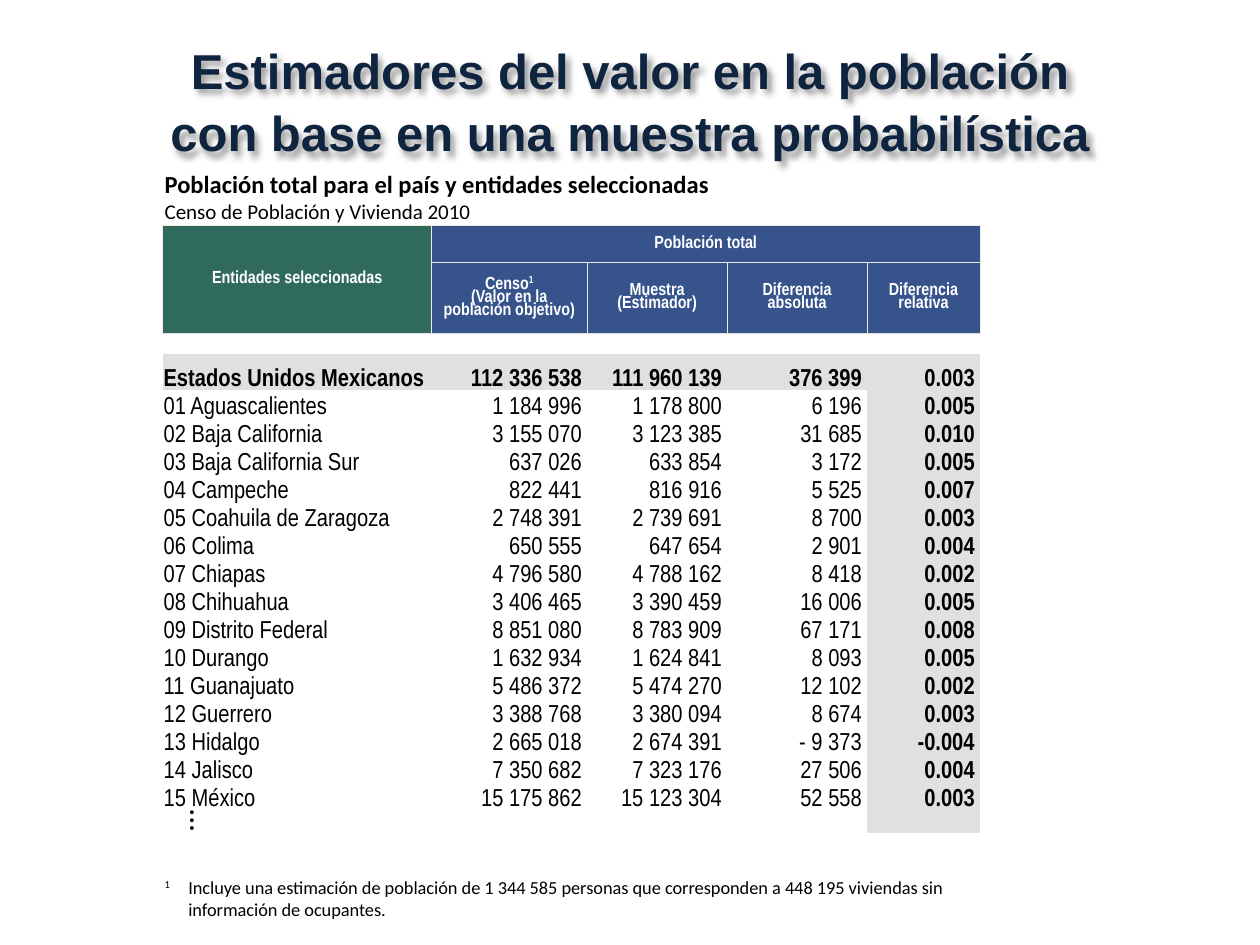
from lxml import etree
from pptx import Presentation
from pptx.dml.color import RGBColor
from pptx.enum.text import MSO_ANCHOR, MSO_AUTO_SIZE, PP_ALIGN
from pptx.oxml import parse_xml
from pptx.oxml.ns import nsdecls, qn
from pptx.util import Pt

LEFT, CENTER, RIGHT = PP_ALIGN.LEFT, PP_ALIGN.CENTER, PP_ALIGN.RIGHT
TOP, MIDDLE, BOTTOM = MSO_ANCHOR.TOP, MSO_ANCHOR.MIDDLE, MSO_ANCHOR.BOTTOM
NO_AUTOFIT = MSO_AUTO_SIZE.NONE

NAVY, GREEN, BLUE, GRAY = "0F243E", "306A5C", "36538C", "E0E0E0"
CREAM, WHITE, BLACK = "EEECE1", "FFFFFF", "000000"
NARROW = "Arial Narrow"
PLAIN_STYLE = "{2D5ABB26-0587-4C30-8999-92F81FD0307C}"

TITLE = "Estimadores del valor en la población\vcon base en una muestra probabilística"
HEADING = "Población total para el país y entidades seleccionadas"
SUBHEADING = "Censo de Población y Vivienda 2010"
FOOTNOTE = ("\tIncluye una estimación de población de 1 344 585 personas que "
            "corresponden a 448 195 viviendas sin información de ocupantes.")
ENTITY_HEADER, GROUP_HEADER = "Entidades seleccionadas", "Población total"
COLUMN_HEADERS = [
    "Censo\n(Valor en la población objetivo)",
    "Muestra\n(Estimador)",
    "Diferencia\vabsoluta",
    "Diferencia relativa",
]
ENTITIES = [
    ("Estados Unidos Mexicanos", "112 336 538", "111 960 139", "376 399", "0.003"),
    ("01 Aguascalientes", "1 184 996", "1 178 800", "6 196", "0.005"),
    ("02 Baja California", "3 155 070", "3 123 385", "31 685", "0.010"),
    ("03 Baja California Sur", "637 026", "633 854", "3 172", "0.005"),
    ("04 Campeche", "822 441", "816 916", "5 525", "0.007"),
    ("05 Coahuila de Zaragoza", "2 748 391", "2 739 691", "8 700", "0.003"),
    ("06 Colima", "650 555", "647 654", "2 901", "0.004"),
    ("07 Chiapas", "4 796 580", "4 788 162", "8 418", "0.002"),
    ("08 Chihuahua", "3 406 465", "3 390 459", "16 006", "0.005"),
    ("09 Distrito Federal", "8 851 080", "8 783 909", "67 171", "0.008"),
    ("10 Durango", "1 632 934", "1 624 841", "8 093", "0.005"),
    ("11 Guanajuato", "5 486 372", "5 474 270", "12 102", "0.002"),
    ("12 Guerrero", "3 388 768", "3 380 094", "8 674", "0.003"),
    ("13 Hidalgo", "2 665 018", "2 674 391", "- 9 373", "-0.004"),
    ("14 Jalisco", "7 350 682", "7 323 176", "27 506", "0.004"),
    ("15 México", "15 175 862", "15 123 304", "52 558", "0.003"),
]
COLUMN_WIDTHS = [153.5, 89, 80, 80, 64.5]
ROW_HEIGHTS = [20.75, 40.75, 12, 20.5] + [16] * (len(ENTITIES) - 1) + [13]
FIRST_ENTITY_ROW = 3
LAST_ROW = len(ROW_HEIGHTS) - 1
LAST_COLUMN = len(COLUMN_WIDTHS) - 1


def color(value):
    return RGBColor.from_string(value)


def format_runs(paragraph, size, font_name, value, bold=False):
    for run in paragraph.runs:
        run.font.size = Pt(size)
        run.font.name = font_name
        run.font.bold = bold
        run.font.color.rgb = color(value)


def add_superscript(paragraph):
    run = paragraph.add_run()
    run.text = "1"
    run.font._element.set("baseline", "30000")


def add_text_box(slide, left, top, width, height):
    frame = slide.shapes.add_textbox(Pt(left), Pt(top), Pt(width), Pt(height)).text_frame
    frame.word_wrap = True
    return frame


def set_borders(cell, bottom):
    properties = cell._tc.get_or_add_tcPr()
    sides = [("lnL", CREAM), ("lnR", CREAM), ("lnT", CREAM), ("lnB", bottom)]
    for index, (side, value) in enumerate(sides):
        properties.insert(index, parse_xml(
            f'<a:{side} {nsdecls("a")} w="{Pt(0.5)}"><a:solidFill>'
            f'<a:srgbClr val="{value}"/></a:solidFill></a:{side}>'))


def write_cell(cell, text, alignment, anchor, size, value, bold, side_margin):
    cell.text_frame.text = text
    cell.vertical_anchor = anchor
    cell.margin_left = cell.margin_right = Pt(side_margin)
    cell.margin_top, cell.margin_bottom = Pt(0.5), Pt(0)
    for paragraph in cell.text_frame.paragraphs:
        paragraph.alignment = alignment
        paragraph.line_spacing = 0.8
        format_runs(paragraph, size, NARROW, value, bold)


def fill_cell(cell, value):
    cell.fill.solid()
    cell.fill.fore_color.rgb = color(value)


def shrink_empty_cell(cell):
    cell.margin_top = cell.margin_bottom = Pt(0)
    mark = etree.SubElement(cell.text_frame.paragraphs[0]._p, qn("a:endParaRPr"))
    mark.set("sz", "600")


def add_title(slide):
    title = slide.shapes.title
    title.left, title.top, title.width, title.height = Pt(0), Pt(15), Pt(720), Pt(83)
    frame = title.text_frame
    frame.text = TITLE
    frame.auto_size = NO_AUTOFIT
    frame.vertical_anchor = MIDDLE
    paragraph = frame.paragraphs[0]
    paragraph.alignment = CENTER
    paragraph.line_spacing = 1.07
    format_runs(paragraph, 28, "Arial", NAVY, True)
    title._element.spPr.append(parse_xml(
        f'<a:effectLst {nsdecls("a")}><a:outerShdw blurRad="{Pt(4)}" dist="{Pt(3)}" '
        'dir="2700000" algn="tl" rotWithShape="0"><a:srgbClr val="000000">'
        '<a:alpha val="40000"/></a:srgbClr></a:outerShdw></a:effectLst>'))


def add_headers(table):
    table.cell(0, 0).merge(table.cell(1, 0))
    table.cell(0, 1).merge(table.cell(0, LAST_COLUMN))
    for row in range(2):
        for column in range(LAST_COLUMN + 1):
            cell = table.cell(row, column)
            set_borders(cell, GRAY if row or not column else CREAM)
            fill_cell(cell, BLUE if column else GREEN)
    write_cell(table.cell(0, 0), ENTITY_HEADER, CENTER, MIDDLE, 10, WHITE, True, 0.5)
    write_cell(table.cell(0, 1), GROUP_HEADER, CENTER, MIDDLE, 10, WHITE, True, 0.5)
    for column, header in enumerate(COLUMN_HEADERS, 1):
        write_cell(table.cell(1, column), header, CENTER, MIDDLE, 10, WHITE, True, 3)
    census = table.cell(1, 1).text_frame.paragraphs[0]
    add_superscript(census)
    format_runs(census, 10, NARROW, WHITE, True)


def add_entities(table):
    for row, values in enumerate(ENTITIES, FIRST_ENTITY_ROW):
        for column, value in enumerate(values):
            cell = table.cell(row, column)
            emphasized = row == FIRST_ENTITY_ROW or column == LAST_COLUMN
            alignment, margin = (RIGHT, 3) if column else (LEFT, 0.5)
            write_cell(cell, value, alignment, BOTTOM, 14, BLACK, emphasized, margin)
            if emphasized:
                fill_cell(cell, GRAY)


def add_population_table(slide):
    table = slide.shapes.add_table(
        len(ROW_HEIGHTS), len(COLUMN_WIDTHS), Pt(93), Pt(129),
        Pt(sum(COLUMN_WIDTHS)), Pt(sum(ROW_HEIGHTS))).table
    table.first_row = table.horz_banding = False
    table._tbl.tblPr.find(qn("a:tableStyleId")).text = PLAIN_STYLE
    for column, width in zip(table.columns, COLUMN_WIDTHS):
        column.width = Pt(width)
    for row, height in zip(table.rows, ROW_HEIGHTS):
        row.height = Pt(height)
    add_headers(table)
    add_entities(table)
    for column in range(LAST_COLUMN + 1):
        shrink_empty_cell(table.cell(2, column))
        fill_cell(table.cell(2, column), WHITE)
        if column:
            shrink_empty_cell(table.cell(LAST_ROW, column))
    fill_cell(table.cell(LAST_ROW, LAST_COLUMN), GRAY)
    ellipsis = table.cell(LAST_ROW, 0)
    write_cell(ellipsis, "…", LEFT, TOP, 18, BLACK, False, 0.5)
    ellipsis._tc.get_or_add_tcPr().set("vert", "vert270")
    paragraph = ellipsis.text_frame.paragraphs[0]
    paragraph.line_spacing = 1
    format_runs(paragraph, 18, "Calibri", BLACK)


def add_footnote(slide):
    paragraph = add_text_box(slide, 87, 497, 472, 32).paragraphs[0]
    properties = paragraph._p.get_or_add_pPr()
    properties.set("marL", str(Pt(13.5)))
    properties.set("indent", str(-Pt(13.5)))
    tabs = etree.SubElement(properties, qn("a:tabLst"))
    etree.SubElement(tabs, qn("a:tab"), pos=str(Pt(13.5)), algn="l")
    add_superscript(paragraph)
    paragraph.add_run().text = FOOTNOTE
    format_runs(paragraph, 10.5, "Calibri", BLACK)


def add_heading(slide):
    frame = add_text_box(slide, 87, 93, 497, 39)
    frame.text = f"{HEADING}\n{SUBHEADING}"
    heading, subheading = frame.paragraphs
    format_runs(heading, 14, "Calibri", BLACK, True)
    format_runs(subheading, 12, "Calibri", BLACK)


def main():
    presentation = Presentation()
    presentation.slide_width, presentation.slide_height = Pt(720), Pt(540)
    slide = presentation.slides.add_slide(presentation.slide_layouts[5])
    add_title(slide)
    add_population_table(slide)
    add_footnote(slide)
    add_heading(slide)
    presentation.save("out.pptx")


if __name__ == "__main__":
    main()
